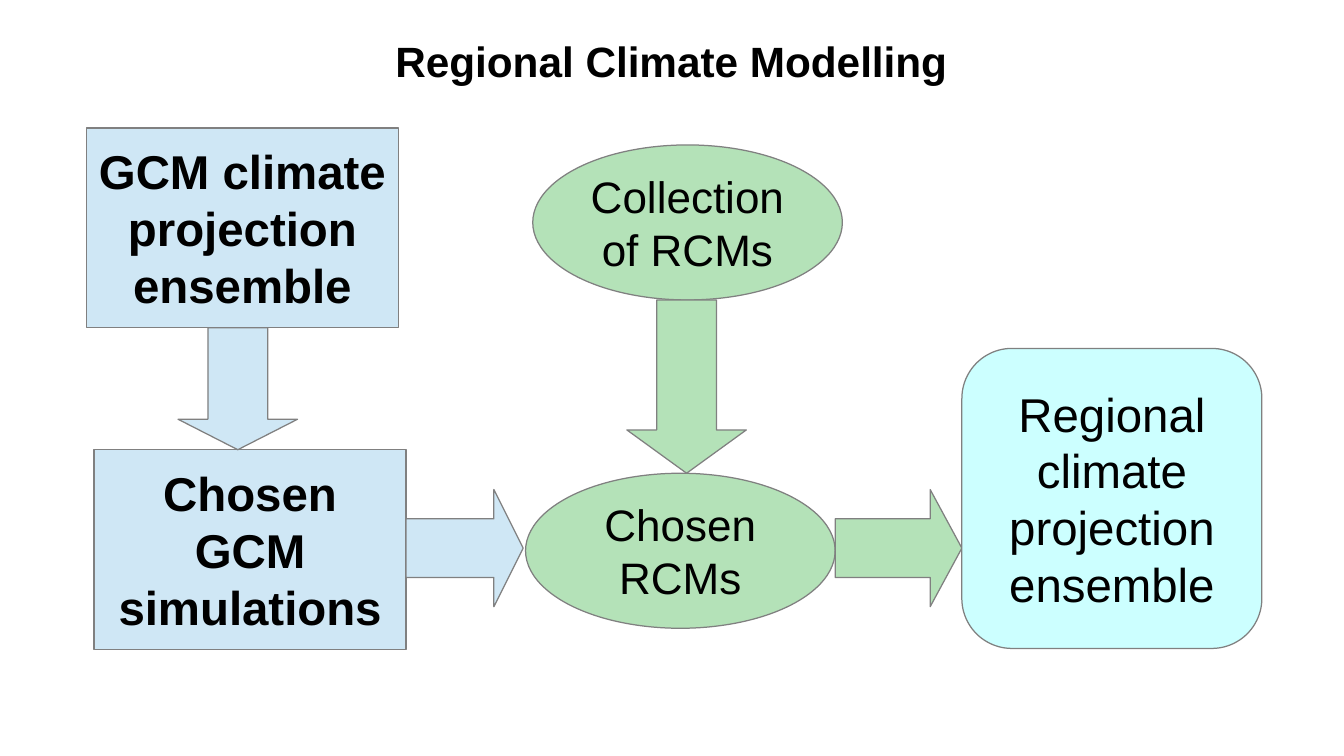
from pptx import Presentation
from pptx.dml.color import RGBColor
from pptx.enum import shapes, text
from pptx.util import Cm, Pt

COLORS = {
    "global": "CFE7F5",
    "regional": "B4E2B8",
    "result": "CCFFFF",
    "outline": "808080",
    "ink": "000000",
}
SHAPE = shapes.MSO_SHAPE
HEAD_SHARE = 0.25


def rgb(name):
    return RGBColor.from_string(COLORS[name])


def write(frame, wording, size, bold=False, margin_x=0.22, margin_y=0.13):
    frame.word_wrap = True
    frame.vertical_anchor = text.MSO_ANCHOR.MIDDLE
    frame.margin_left = frame.margin_right = Cm(margin_x)
    frame.margin_top = frame.margin_bottom = Cm(margin_y)
    paragraph = frame.paragraphs[0]
    paragraph.alignment = text.PP_ALIGN.CENTER
    run = paragraph.add_run()
    run.text = wording
    run.font.name = "Arial"
    run.font.size = Pt(size)
    run.font.bold = bold
    run.font.color.rgb = rgb("ink")


def add_title(slide, wording):
    title = slide.shapes.add_textbox(Cm(1.4), Cm(0.64), Cm(25.17), Cm(1.24))
    write(title.text_frame, wording, size=25, bold=True, margin_x=0, margin_y=0)


def add_filled(slide, kind, place, color):
    figure = slide.shapes.add_shape(kind, *map(Cm, place))
    figure.shadow.inherit = False
    figure.fill.solid()
    figure.fill.fore_color.rgb = rgb(color)
    figure.line.color.rgb = rgb("outline")
    figure.line.width = Pt(0)
    return figure


def add_stage(slide, kind, place, color, wording, **style):
    stage = add_filled(slide, kind, place, color)
    write(stage.text_frame, wording, **style)


def add_block_arrow(slide, kind, place, color):
    arrow = add_filled(slide, kind, place, color)
    width, height = place[2:]
    length = height if kind == SHAPE.DOWN_ARROW else width
    arrow.adjustments[0] = 0.5
    arrow.adjustments[1] = HEAD_SHARE * length / min(width, height)


def main():
    deck = Presentation()
    deck.slide_width, deck.slide_height = Cm(28), Cm(15.75)
    slide = deck.slides.add_slide(deck.slide_layouts[6])

    add_title(slide, "Regional Climate Modelling")

    for left, top, wording in [
        (1.8, 2.67, "GCM climate projection ensemble"),
        (1.96, 9.37, "Chosen GCM simulations"),
    ]:
        add_stage(slide, SHAPE.RECTANGLE, (left, top, 6.5, 4.16), "global",
                  wording, size=28, bold=True)

    for left, top, wording in [
        (11.1, 3.02, "Collection of RCMs"),
        (10.95, 9.86, "Chosen RCMs"),
    ]:
        add_stage(slide, SHAPE.OVAL, (left, top, 6.45, 3.23), "regional",
                  wording, size=26)

    for kind, place, color in [
        (SHAPE.DOWN_ARROW, (3.71, 6.83, 2.49, 2.54), "global"),
        (SHAPE.RIGHT_ARROW, (8.46, 10.2, 2.44, 2.44), "global"),
        (SHAPE.DOWN_ARROW, (13.06, 6.25, 2.49, 3.61), "regional"),
        (SHAPE.RIGHT_ARROW, (17.4, 10.2, 2.64, 2.44), "regional"),
    ]:
        add_block_arrow(slide, kind, place, color)

    add_stage(slide, SHAPE.ROUNDED_RECTANGLE, (20.04, 7.26, 6.25, 6.25),
              "result", "Regional climate projection ensemble", size=28)

    deck.save("out.pptx")


if __name__ == "__main__":
    main()
